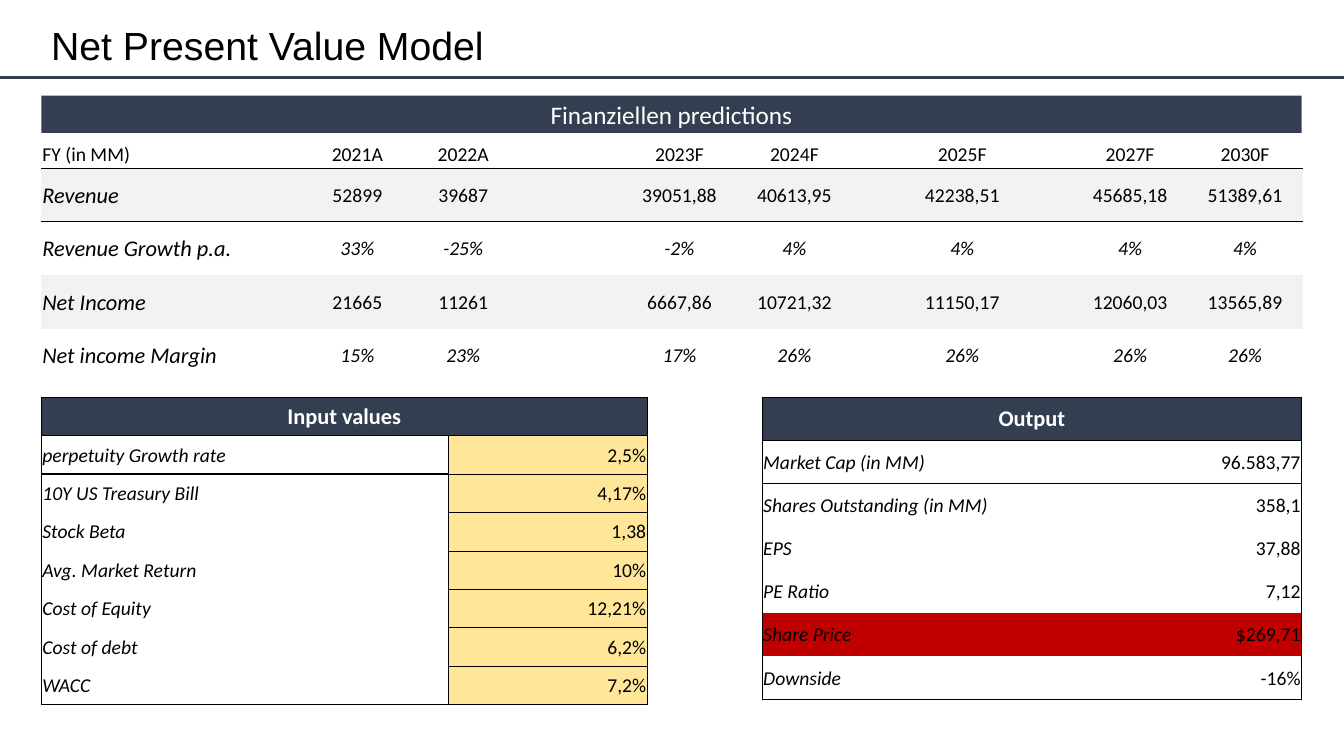
import pptx
import pptx.dml.color
import pptx.enum.shapes
import pptx.enum.text
import pptx.oxml.ns
import pptx.util
from lxml import etree
from pptx.util import Inches

ALIGN = pptx.enum.text.PP_ALIGN
MIDDLE = pptx.enum.text.MSO_ANCHOR.MIDDLE
qn = pptx.oxml.ns.qn
rgb = pptx.dml.color.RGBColor.from_string

THEME = {
    "navy": "333F50", "black": "000000", "white": "FFFFFF",
    "band": "F2F2F2", "input": "FFE699", "alert": "C00000",
    "title": 28, "banner": 18, "heading": 16, "body": 14,
    "title_font": "Arial", "font": "Calibri",
    "thin": 0.5, "rule": 1, "title_rule": 2.25,
}
NO_STYLE = "{2D5ABB26-0587-4C30-8999-92F81FD0307C}"


def write(frame, text, size, align=ALIGN.LEFT, color="black", font="font", bold=False, italic=False):
    frame.text = text
    para = frame.paragraphs[0]
    para.alignment = align
    for span in para.runs:
        span.font.size = pptx.util.Pt(THEME[size])
        span.font.name = THEME[font]
        span.font.color.rgb = rgb(THEME[color])
        span.font.bold = bold
        span.font.italic = italic
    if not text:
        # An empty cell keeps the row height of its neighbours
        etree.SubElement(para._p, qn("a:endParaRPr"), sz=str(THEME[size] * 100))


def fill_cell(cell, text, size, fill=None, borders=None, **style):
    write(cell.text_frame, text, size, **style)
    cell.vertical_anchor = MIDDLE
    cell.margin_left = cell.margin_right = cell.margin_top = Inches(0.01)
    cell.margin_bottom = 0
    properties = cell._tc.get_or_add_tcPr()
    for side in "LRTB":
        if side in (borders or {}):
            width = pptx.util.Pt(THEME[borders[side]])
            line = etree.SubElement(properties, qn("a:ln" + side), w=str(width))
            solid = etree.SubElement(line, qn("a:solidFill"))
            etree.SubElement(solid, qn("a:srgbClr"), val=THEME["black"])
    if fill:
        cell.fill.solid()
        cell.fill.fore_color.rgb = rgb(THEME[fill])
    else:
        cell.fill.background()


deck = pptx.Presentation()
deck.slide_width, deck.slide_height = Inches(13.33), Inches(7.5)
page = deck.slides.add_slide(deck.slide_layouts[6])

# Title and rule
title = page.shapes.add_textbox(Inches(0.41), Inches(0.18), Inches(12.5), Inches(0.59))
title.text_frame.word_wrap = True
title.text_frame.vertical_anchor = MIDDLE
write(title.text_frame, "Net Present Value Model", "title", font="title_font")
title.text_frame.paragraphs[0].line_spacing = 0.9

rule = page.shapes.add_connector(
    pptx.enum.shapes.MSO_CONNECTOR.STRAIGHT, 0, Inches(0.77), deck.slide_width, Inches(0.77))
rule.line.color.rgb = rgb(THEME["navy"])
rule.line.width = pptx.util.Pt(THEME["title_rule"])
etree.SubElement(rule._element.spPr, qn("a:effectLst"))

# Banner
banner = page.shapes.add_shape(
    pptx.enum.shapes.MSO_SHAPE.RECTANGLE, Inches(0.41), Inches(0.95), Inches(12.5), Inches(0.37))
banner.shadow.inherit = False
banner.fill.solid()
banner.fill.fore_color.rgb = rgb(THEME["navy"])
banner.line.fill.background()
banner.text_frame.vertical_anchor = MIDDLE
write(banner.text_frame, "Finanziellen predictions", "banner", ALIGN.CENTER, "white")

# Table contents
forecast_rows = [
    ["FY (in MM)", "2021A", "2022A", "", "2023F", "2024F", "2025F", "2027F", "2030F"],
    ["Revenue", "52899", "39687", "", "39051,88", "40613,95", "42238,51", "45685,18", "51389,61"],
    ["Revenue Growth p.a.", "33%", "-25%", "", "-2%", "4%", "4%", "4%", "4%"],
    ["Net Income", "21665", "11261", "", "6667,86", "10721,32", "11150,17", "12060,03", "13565,89"],
    ["Net income Margin", "15%", "23%", "", "17%", "26%", "26%", "26%", "26%"],
]
input_rows = [
    ["Input values", ""],
    ["perpetuity Growth rate", "2,5%"],
    ["10Y US Treasury Bill", "4,17%"],
    ["Stock Beta", "1,38"],
    ["Avg. Market Return", "10%"],
    ["Cost of Equity", "12,21%"],
    ["Cost of debt", "6,2%"],
    ["WACC", "7,2%"],
]
output_rows = [
    ["Output", ""],
    ["Market Cap (in MM)", "96.583,77"],
    ["Shares Outstanding (in MM)", "358,1"],
    ["EPS", "37,88"],
    ["PE Ratio", "7,12"],
    ["Share Price", "$269,71"],
    ["Downside", "-16%"],
]

# Empty tables: rows, left, top, column widths, row heights
layouts = [
    (forecast_rows, 0.41, 1.4, [2.61, 1.05, 1.05, 1.05, 1.14, 1.14, 2.19, 1.14, 1.14],
     [0.27] + [0.53] * 4),
    (input_rows, 0.41, 3.94, [4.04, 1.97], [3.05 / 8] * 8),
    (output_rows, 7.56, 3.94, [3.51, 1.84], [3 / 7] * 7),
]
tables = []
for rows, left, top, widths, heights in layouts:
    table = page.shapes.add_table(
        len(rows), len(widths), Inches(left), Inches(top),
        Inches(sum(widths)), Inches(sum(heights))).table
    table.first_row = table.horz_banding = False
    table._tbl.tblPr.find(qn("a:tableStyleId")).text = NO_STYLE
    for column, width in zip(table.columns, widths):
        column.width = Inches(width)
    for row, height in zip(table.rows, heights):
        row.height = Inches(height)
    tables.append(table)
forecast_table, input_table, output_table = tables

# Forecast: banded figure rows, italic ratio rows
for r, row in enumerate(forecast_rows):
    for c, text in enumerate(row):
        is_label = c == 0
        fill_cell(
            forecast_table.cell(r, c), text,
            "heading" if is_label and r else "body",
            fill="band" if r % 2 else None,
            borders={0: {"B": "rule"}, 1: {"T": "rule"}}.get(r),
            align=ALIGN.LEFT if is_label else ALIGN.CENTER,
            italic=r > 0 and (is_label or r % 2 == 0))

# Inputs and outputs: merged heading, then label and value in a frame
for table, rows in ((input_table, input_rows), (output_table, output_rows)):
    is_input = table is input_table
    table.cell(0, 0).merge(table.cell(0, 1))
    for c in range(2):
        fill_cell(table.cell(0, c), rows[0][c], "heading", fill="navy",
                  borders=dict.fromkeys("LRTB", "rule"),
                  align=ALIGN.CENTER, color="white", bold=True)
    for r, (label, value) in enumerate(rows[1:], 1):
        edges = {"T": "rule"} if r == 1 else {}
        if r == len(rows) - 1:
            edges["B"] = "rule"
        row_fill = "alert" if label == "Share Price" else None
        label_edges = {**edges, "L": "rule"}
        value_edges = {**edges, "R": "rule"}
        if is_input:
            label_edges["R"] = "thin"
            value_edges = {"L": "thin", "T": "thin", "B": "thin", **value_edges}
        fill_cell(table.cell(r, 0), label, "body", fill=row_fill,
                  borders=label_edges, italic=True)
        fill_cell(table.cell(r, 1), value, "body", fill="input" if is_input else row_fill,
                  borders=value_edges, align=ALIGN.RIGHT)

deck.save("out.pptx")
